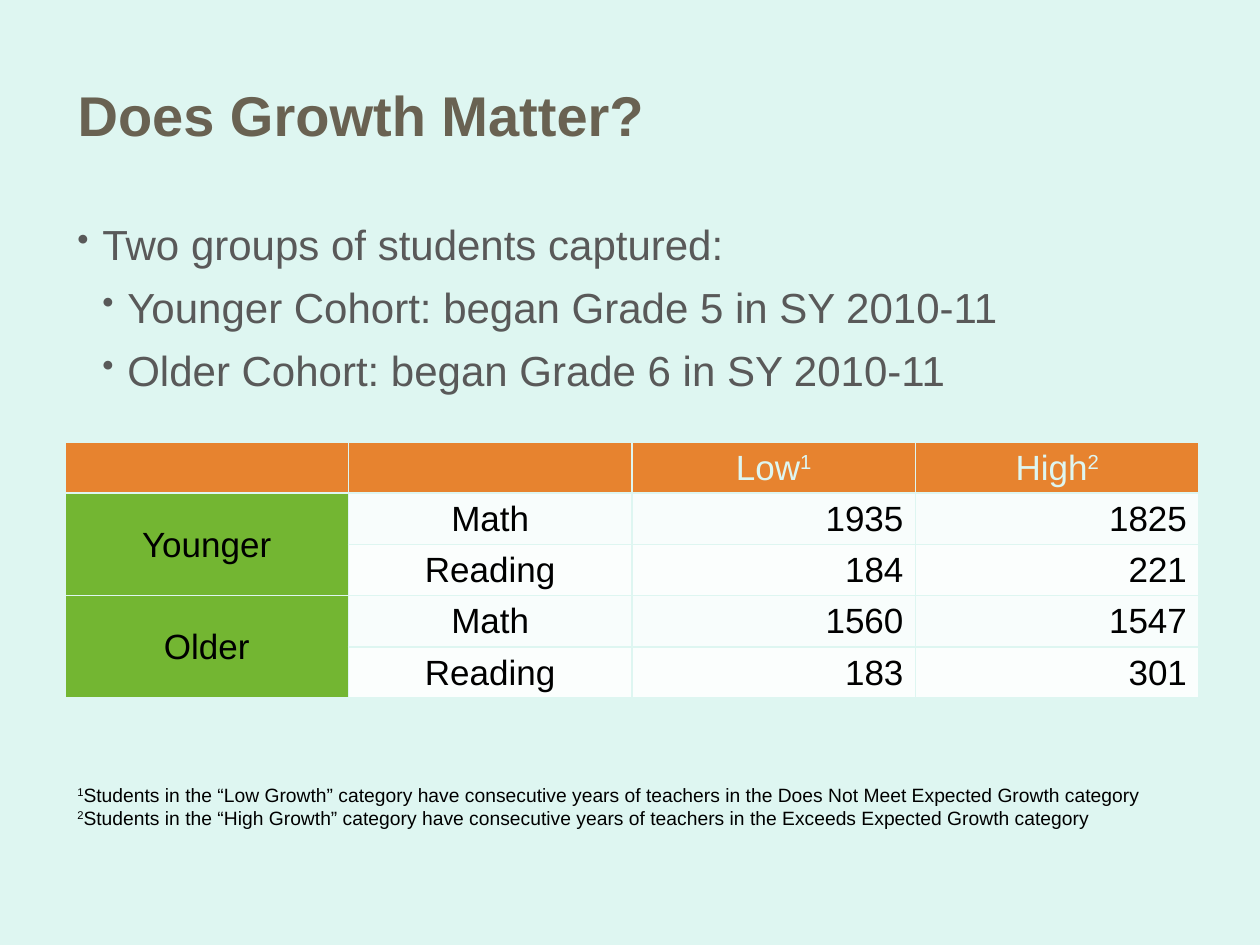
from lxml import etree
from pptx import Presentation
from pptx.dml.color import RGBColor
from pptx.enum.text import MSO_ANCHOR, MSO_AUTO_SIZE, PP_ALIGN
from pptx.oxml.ns import qn
from pptx.util import Emu, Pt

LEFT, MID, RIGHT = PP_ALIGN.LEFT, PP_ALIGN.CENTER, PP_ALIGN.RIGHT
CENTER, BOTTOM = MSO_ANCHOR.MIDDLE, MSO_ANCHOR.BOTTOM
NO_FIT = MSO_AUTO_SIZE.NONE
PX = 914400 / 126
BACK = "DEF6F1"


def rgb(code):
    return RGBColor.from_string(code)


def write(para, parts, size, color, align=LEFT, bold=False):
    para.alignment = align
    font = para.font
    font.name, font.size, font.bold = "Arial", Pt(size), bold
    font.color.rgb = rgb(color)
    for text, raised in parts:
        run = para.add_run()
        run.text = text
        if raised:
            run._r.get_or_add_rPr().set("baseline", "30000")


def px(*nums):
    return [Emu(round(n * PX)) for n in nums]


deck = Presentation()
deck.slide_width, deck.slide_height = px(1260, 945)
slide = deck.slides.add_slide(deck.slide_layouts[5])
slide.background.fill.solid()
slide.background.fill.fore_color.rgb = rgb(BACK)

title = slide.shapes.title
title.left, title.top, title.width, title.height = px(65, 73, 1148, 81)
frame = title.text_frame
frame.auto_size = NO_FIT
frame.vertical_anchor = BOTTOM
write(frame.paragraphs[0], [("Does Growth Matter?", False)], 32, "696252", bold=True)

rows = [
    ["", "", "Low", "High"],
    ["Younger", "Math", "1935", "1825"],
    ["", "Reading", "184", "221"],
    ["Older", "Math", "1560", "1547"],
    ["", "Reading", "183", "301"],
]
notes = {"Low": "1", "High": "2"}
grid = slide.shapes.add_table(5, 4, *px(65, 442, 1134, 256)).table
grid.first_row = grid.horz_banding = False
for col in grid.columns:
    col.width = px(283.5)[0]
for row in grid.rows:
    row.height = px(51.2)[0]
for top in (1, 3):
    grid.cell(top, 0).merge(grid.cell(top + 1, 0))

for r, row in enumerate(rows):
    for c, text in enumerate(row):
        cell = grid.cell(r, c)
        props = cell._tc.get_or_add_tcPr()
        for side in ("a:lnL", "a:lnR", "a:lnT", "a:lnB"):
            line = etree.SubElement(props, qn(side), w="12700")
            fill = etree.SubElement(line, qn("a:solidFill"))
            etree.SubElement(fill, qn("a:srgbClr"), val=BACK)
        if r == 0:
            shade = "E7832F"
        elif c == 0:
            shade = "73B632"
        else:
            shade = "F8FDFC" if r % 2 else "FBFEFD"
        cell.fill.solid()
        cell.fill.fore_color.rgb = rgb(shade)
        cell.vertical_anchor = CENTER
        cell.margin_left, cell.margin_top, cell.margin_bottom = px(1, 1, 0)
        number = r > 0 and c > 1
        cell.margin_right = px(12 if number else 1)[0]
        if text:
            parts = [(text, False)]
            if text in notes:
                parts.append((notes[text], True))
            para = cell.text_frame.paragraphs[0]
            write(para, parts, 20, "000000" if r else BACK, RIGHT if number else MID)

frame = slide.shapes.add_textbox(*px(65, 199, 1043, 140)).text_frame
frame.word_wrap = True
frame.margin_top = px(9)[0]
points = [
    (0, "Two groups of students captured:"),
    (1, "Younger Cohort: began Grade 5 in SY 2010-11"),
    (1, "Older Cohort: began Grade 6 in SY 2010-11"),
]
for i, (level, text) in enumerate(points):
    para = frame.add_paragraph() if i else frame.paragraphs[0]
    para.level = level
    para.line_spacing = 1.2
    if i:
        para.space_before = Pt(1.5)
    props = para._p.get_or_add_pPr()
    step = px(25)[0]
    props.set("marL", str(step * (level + 1)))
    props.set("indent", str(-step))
    etree.SubElement(props, qn("a:buSzPct"), val="80000")
    etree.SubElement(props, qn("a:buChar"), char="•")
    write(para, [(text, False)], 24, "595959")

frame = slide.shapes.add_textbox(*px(65, 777, 1095, 59)).text_frame
frame.word_wrap = False
feet = [
    "Students in the “Low Growth” category have consecutive years of teachers in the Does Not Meet Expected Growth category",
    "Students in the “High Growth” category have consecutive years of teachers in the Exceeds Expected Growth category",
]
for i, text in enumerate(feet):
    para = frame.add_paragraph() if i else frame.paragraphs[0]
    write(para, [(str(i + 1), True), (text, False)], 11, "000000")

deck.save("out.pptx")
